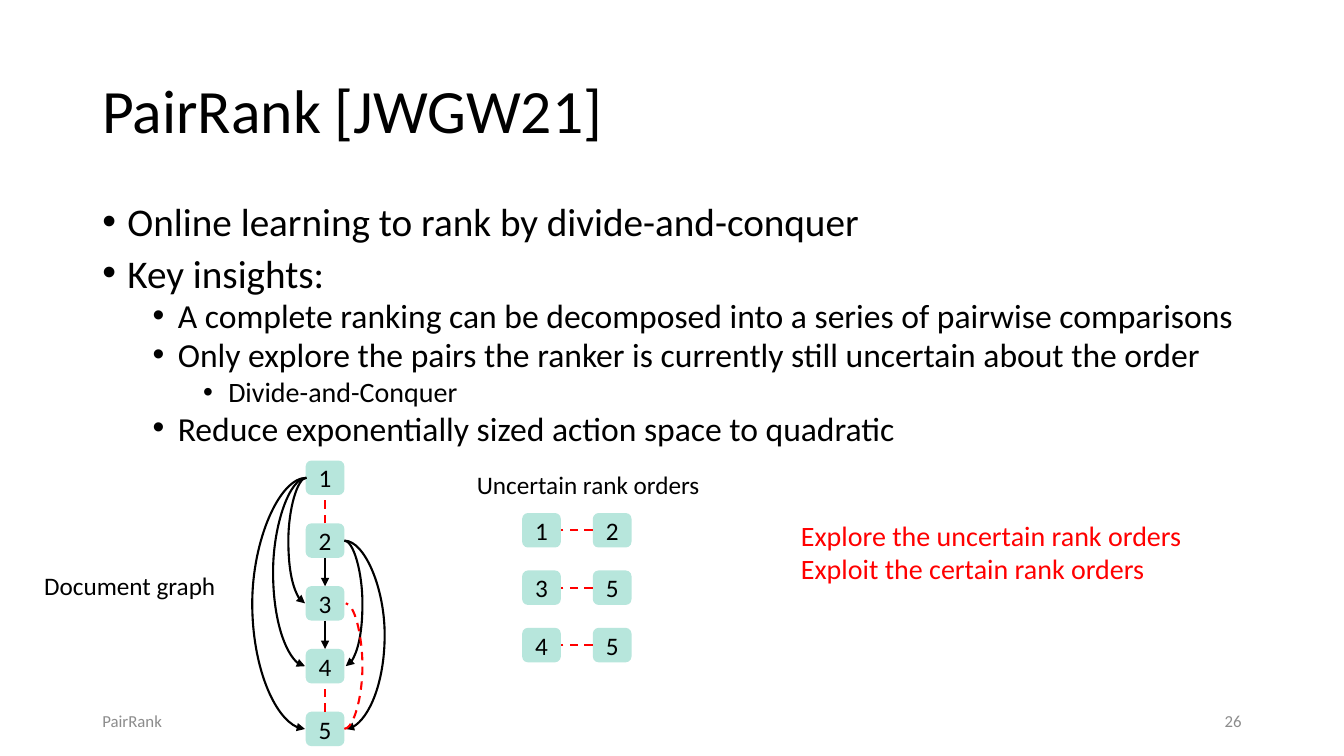
from lxml import etree
from pptx import Presentation
from pptx.dml.color import RGBColor
from pptx.enum.dml import MSO_LINE
from pptx.enum.shapes import MSO_CONNECTOR, MSO_SHAPE
from pptx.enum.text import MSO_ANCHOR, PP_ALIGN
from pptx.oxml.ns import qn
from pptx.util import Pt

STRAIGHT, CURVE = MSO_CONNECTOR.STRAIGHT, MSO_CONNECTOR.CURVE
ROUND, DASH = MSO_SHAPE.ROUNDED_RECTANGLE, MSO_LINE.DASH
TOP, MIDDLE = MSO_ANCHOR.TOP, MSO_ANCHOR.MIDDLE
LEFT, CENTER, RIGHT = PP_ALIGN.LEFT, PP_ALIGN.CENTER, PP_ALIGN.RIGHT
COLORS = {"ink": "000000", "red": "FF0000", "mint": "B7E6DC", "gray": "8C8C8C"}

deck = Presentation()
deck.slide_width, deck.slide_height = Pt(960), Pt(540)
slide = deck.slides.add_slide(deck.slide_layouts[6])
shapes = slide.shapes


def write(para, text, size, color="ink", align=LEFT):
    para.alignment = align
    run = para.add_run()
    run.text = text
    run.font.name, run.font.size = "Calibri", Pt(size)
    run.font.color.rgb = RGBColor.from_string(COLORS[color])


def draw(kind, start, end, sure):
    """Sure orders are black arrows, unsure ones are red dashes."""
    link = shapes.add_connector(kind, *map(Pt, start + end))
    link.line.width = Pt(1.5)
    link.line.color.rgb = RGBColor.from_string(COLORS["ink" if sure else "red"])
    if sure:
        etree.SubElement(link.line._get_or_add_ln(), qn("a:tailEnd"), type="triangle")
    else:
        link.line.dash_style = DASH
    etree.SubElement(link._element.spPr, qn("a:effectLst"))
    return link


# Title, labels and footer
labels = [
    (66, 29, 905, 104, ["PairRank [JWGW21]"], 44, "ink", LEFT, MIDDLE),
    (333.5, 331.5, 180, 29, ["Uncertain rank orders"], 18, "ink", LEFT, TOP),
    (24.5, 404, 148, 29, ["Document graph"], 18, "ink", LEFT, TOP),
    (565, 366.5, 353, 55.5, ["Explore the uncertain rank orders",
                             "Exploit the certain rank orders"], 20, "red", LEFT, TOP),
    (66, 500.5, 216, 29, ["PairRank"], 12, "gray", LEFT, MIDDLE),
    (678, 500.5, 216, 29, ["26"], 12, "gray", RIGHT, MIDDLE),
]
for x, y, w, h, lines, size, color, align, anchor in labels:
    frame = shapes.add_textbox(Pt(x), Pt(y), Pt(w), Pt(h)).text_frame
    frame.word_wrap, frame.vertical_anchor = True, anchor
    for i, text in enumerate(lines):
        para = frame.add_paragraph() if i else frame.paragraphs[0]
        write(para, text, size, color, align)
        if size == 44:
            para.line_spacing = 0.9

# Bullets
points = [
    (0, "Online learning to rank by divide-and-conquer"),
    (0, "Key insights:"),
    (1, "A complete ranking can be decomposed into a series of pairwise comparisons"),
    (1, "Only explore the pairs the ranker is currently still uncertain about the order"),
    (2, "Divide-and-Conquer"),
    (1, "Reduce exponentially sized action space to quadratic"),
]
frame = shapes.add_textbox(Pt(66), Pt(144), Pt(828), Pt(187)).text_frame
frame.word_wrap = True
for i, (level, text) in enumerate(points):
    para = frame.add_paragraph() if i else frame.paragraphs[0]
    para.level, para.line_spacing = level, 0.8
    if i:
        para.space_before = Pt(5 if level else 10)
    props = para._p.get_or_add_pPr()
    props.set("marL", str(Pt(18 + 36 * level)))
    props.set("indent", str(Pt(-18)))
    etree.SubElement(props, qn("a:buFont"), typeface="Arial")
    etree.SubElement(props, qn("a:buChar"), char="•")
    write(para, text, 28 - 4 * level)

# Boxes: the graph column, then the unsure pairs
box_w, box_h = 27.6, 24.6
col_x, col_y, step = 218.4, 329, 44.85
spots = [(str(i + 1), col_x, col_y + i * step) for i in range(5)]
for row, pair in enumerate(["12", "35", "45"]):
    spots += [(name, 373 + 50.5 * i, 366.5 + 41 * row) for i, name in enumerate(pair)]
boxes = []
for name, x, y in spots:
    box = shapes.add_shape(ROUND, Pt(x), Pt(y), Pt(box_w), Pt(box_h))
    box.shadow.inherit = False
    box.fill.solid()
    box.fill.fore_color.rgb = RGBColor.from_string(COLORS["mint"])
    box.line.fill.background()
    frame = box.text_frame
    frame.margin_left = frame.margin_right = frame.margin_top = frame.margin_bottom = 0
    frame.vertical_anchor = MIDDLE
    write(frame.paragraphs[0], name, 18, align=CENTER)
    boxes.append(box)
graph, pairs = boxes[:5], boxes[5:]

# Straight links: (from, side, to, side, sure)
joins = [(graph[1], 0, graph[0], 2, False), (graph[1], 2, graph[2], 0, True),
         (graph[2], 2, graph[3], 0, True), (graph[4], 0, graph[3], 2, False)]
joins += [(b, 1, a, 3, False) for a, b in zip(pairs[::2], pairs[1::2])]
for a, out, b, into, sure in joins:
    link = draw(STRAIGHT, (0, 0), (0, 0), sure)
    link.begin_connect(a, out)
    link.end_connect(b, into)

# Curved links: (from, to, bulge in points, side, sure)
arcs = [(1, 3, 13, -1, True), (1, 4, 24, -1, True), (1, 5, 39, -1, True),
        (2, 4, 13, 1, True), (2, 5, 29, 1, True), (5, 3, 13, 1, False)]
for a, b, bulge, side, sure in arcs:
    x = col_x + 0.5 if side < 0 else col_x + box_w
    ya, yb = (col_y + (n - 1) * step + box_h / 2 for n in (a, b))
    arc = draw(CURVE, (x, ya), (x + side, yb), sure)
    # The curve is one point wide, so its bend is the bulge times 100 %
    bend = arc._element.spPr.find(qn("a:prstGeom")).get_or_add_avLst()
    etree.SubElement(bend, qn("a:gd"), name="adj1", fmla=f"val {bulge * 100000}")

deck.save("out.pptx")
